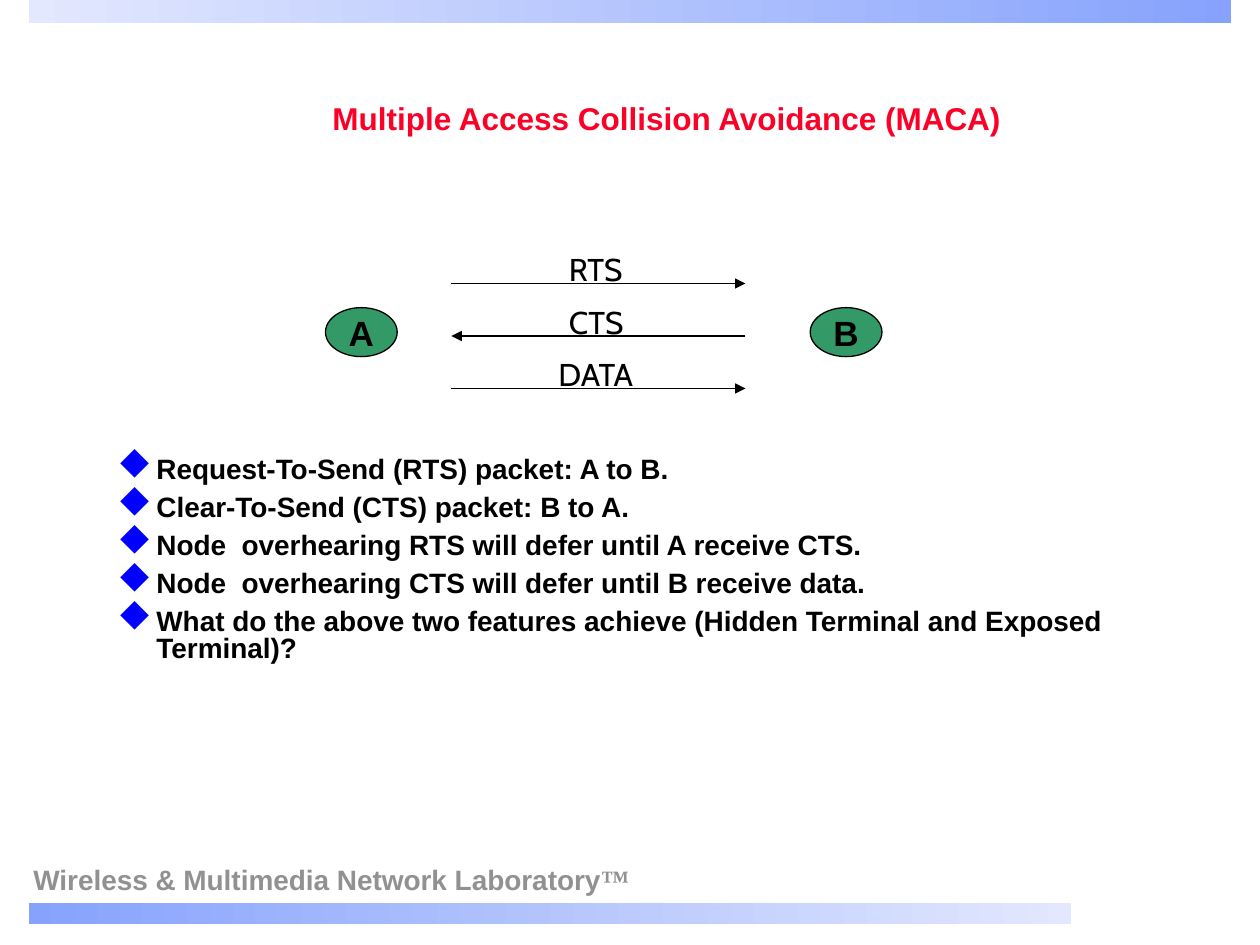
from lxml.etree import SubElement
from pptx import Presentation
from pptx.dml.color import RGBColor
from pptx.enum.shapes import MSO_CONNECTOR, MSO_SHAPE
from pptx.enum.text import MSO_ANCHOR, PP_ALIGN
from pptx.oxml.ns import qn
from pptx.util import Pt

BULLETS = [
    "Request-To-Send (RTS) packet: A to B.",
    "Clear-To-Send (CTS) packet: B to A.",
    "Node  overhearing RTS will defer until A receive CTS.",
    "Node  overhearing CTS will defer until B receive data.",
    "What do the above two features achieve (Hidden Terminal and Exposed Terminal)?",
]


def rgb(color):
    """Turn a hex string into a colour."""
    return RGBColor.from_string(color)


def add_run(p, text, size=16, font="Arial", color="000000", bold=True):
    """Add a formatted run to a paragraph."""
    r = p.add_run()
    r.text = text
    r.font.size = Pt(size)
    r.font.name = font
    r.font.bold = bold
    r.font.color.rgb = rgb(color)


def add_box(s, x, y, w, h, anchor=MSO_ANCHOR.TOP, wrap=True):
    """Add an empty text box and return its text frame."""
    tf = s.shapes.add_textbox(Pt(x), Pt(y), Pt(w), Pt(h)).text_frame
    tf.word_wrap = wrap
    tf.vertical_anchor = anchor
    return tf


def add_band(s, x, y, w, h, start, end):
    """Draw a bar that fades from left to right."""
    sp = s.shapes.add_shape(MSO_SHAPE.RECTANGLE, Pt(x), Pt(y), Pt(w), Pt(h))
    sp.shadow.inherit = False
    sp.line.fill.background()
    sp.fill.gradient()
    sp.fill.gradient_angle = 0
    for stop, color in zip(sp.fill.gradient_stops, (start, end)):
        stop.color.rgb = rgb(color)


def add_footer(s, x, y, w, h):
    """Write the laboratory name."""
    p = add_box(s, x, y, w, h).paragraphs[0]
    p.line_spacing = 0.9
    add_run(p, "Wireless & Multimedia Network Laboratory", color="919191")
    add_run(p, "™", font="Times New Roman", color="919191")


def add_title(s, x, y, w, h):
    """Write the centred title."""
    p = add_box(s, x, y, w, h, MSO_ANCHOR.MIDDLE).paragraphs[0]
    p.alignment = PP_ALIGN.CENTER
    p.line_spacing = 0.9
    add_run(p, "Multiple Access Collision Avoidance (MACA)", size=18, color="FC0128")


def add_bullets(s, x, y, w, h, indent=22.3):
    """Write the list with blue diamond bullets, the letter u in Wingdings."""
    tf = add_box(s, x, y, w, h)
    for i, text in enumerate(BULLETS):
        p = tf.add_paragraph() if i else tf.paragraphs[0]
        p.line_spacing = 0.8
        p.space_before = Pt(6.4 if i else 0)
        pPr = p._p.get_or_add_pPr()
        pPr.set("marL", str(Pt(indent)))
        pPr.set("indent", str(Pt(-indent)))
        SubElement(SubElement(pPr, qn("a:buClr")), qn("a:srgbClr"), val="0000FF")
        SubElement(pPr, qn("a:buSzPct"), val="125000")
        SubElement(pPr, qn("a:buFont"), typeface="Wingdings", pitchFamily="2", charset="2")
        SubElement(pPr, qn("a:buChar"), char="u")
        add_run(p, text)


def add_node(s, name, x, y, w=41, h=28):
    """Draw a station as a green ellipse."""
    sp = s.shapes.add_shape(MSO_SHAPE.OVAL, Pt(x), Pt(y), Pt(w), Pt(h))
    sp.shadow.inherit = False
    sp.fill.solid()
    sp.fill.fore_color.rgb = rgb("339966")
    sp.line.color.rgb = rgb("000000")
    sp.line.width = Pt(0.75)
    tf = sp.text_frame
    tf.word_wrap = False
    tf.vertical_anchor = MSO_ANCHOR.MIDDLE
    p = tf.paragraphs[0]
    p.alignment = PP_ALIGN.CENTER
    add_run(p, name, size=20)


def add_message(s, text, start, end, y, label_x, label_w):
    """Draw a message arrow with its label above."""
    c = s.shapes.add_connector(MSO_CONNECTOR.STRAIGHT, Pt(start), Pt(y), Pt(end), Pt(y))
    c.line.color.rgb = rgb("000000")
    c.line.width = Pt(0.75)
    SubElement(c.line._get_or_add_ln(), qn("a:tailEnd"), type="triangle")
    SubElement(c._element.spPr, qn("a:effectLst"))
    tf = add_box(s, label_x, y - 22.6, label_w, 29)
    add_run(tf.paragraphs[0], text, size=18, font="Cabin", bold=False)


def add_exchange(s, x, y, w):
    """Draw both stations and the messages between them."""
    add_node(s, "A", x, y + 13.8)
    add_node(s, "B", x + w - 41, y + 13.8)
    left, right = x + 72, x + 240
    messages = [
        ("RTS", left, right, 132, 48),
        ("CTS", right, left, 132, 48),
        ("DATA", left, right, 126, 60),
    ]
    for i, (text, start, end, dx, label_w) in enumerate(messages):
        add_message(s, text, start, end, y + 30 * i, x + dx, label_w)


def main():
    """Build the slide and save it."""
    prs = Presentation()
    prs.slide_width, prs.slide_height = Pt(720), Pt(540)
    s = prs.slides.add_slide(prs.slide_layouts[6])
    add_band(s, 16.5, 516, 595.5, 12, "86A2FC", "E3E8FE")
    add_band(s, 16.5, 0, 687, 13, "E3E8FE", "86A2FC")
    add_footer(s, 12, 491.3, 360, 24.5)
    add_title(s, 84, 18, 594, 102)
    add_bullets(s, 60, 258, 648, 264)
    add_exchange(s, 186, 162, 318)
    prs.save("out.pptx")


if __name__ == "__main__":
    main()
